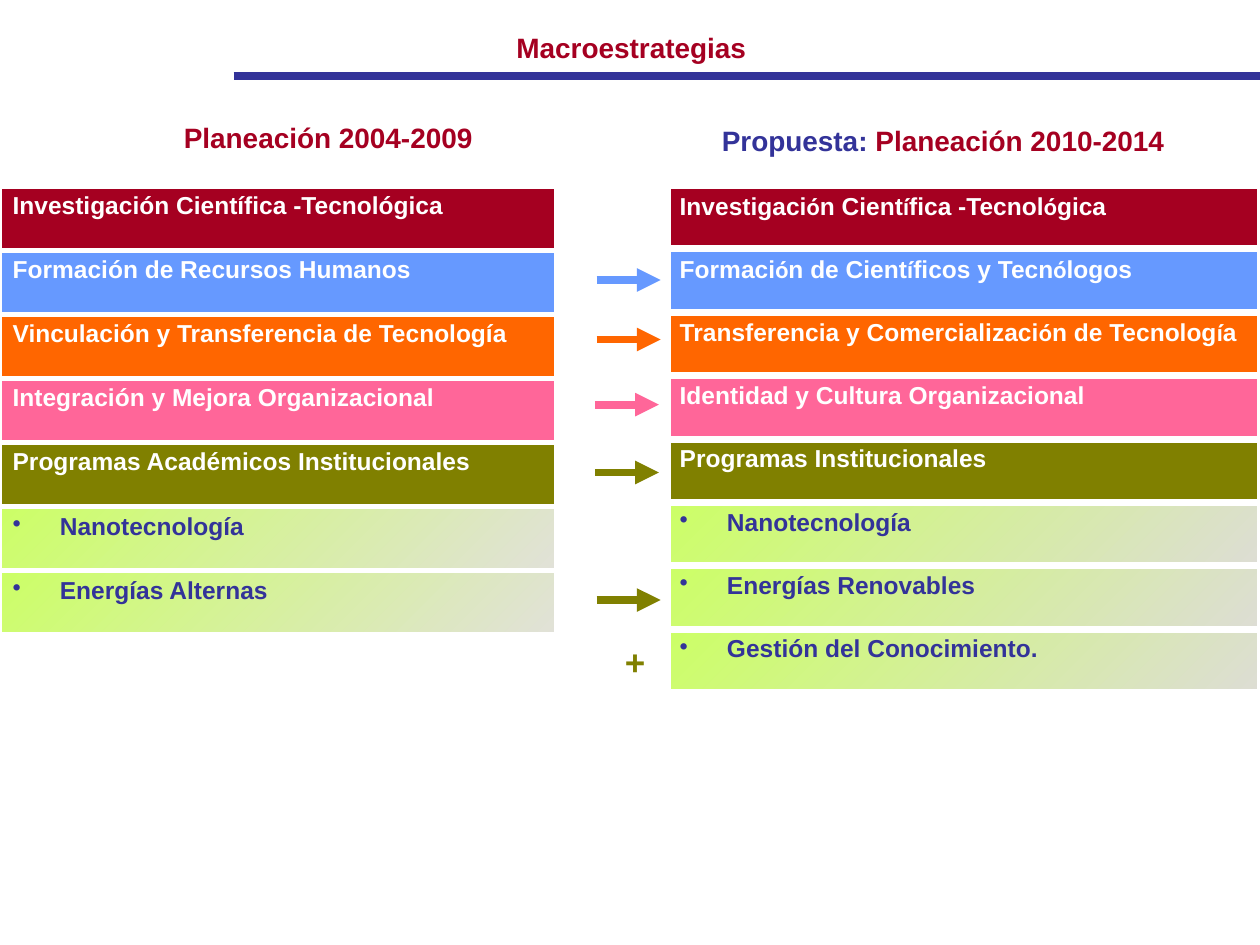
from dataclasses import dataclass
from itertools import groupby
from typing import NamedTuple

from lxml import etree
from pptx import Presentation
from pptx.dml.color import RGBColor
from pptx.enum.shapes import MSO_CONNECTOR
from pptx.enum.text import MSO_AUTO_SIZE, PP_ALIGN
from pptx.oxml.ns import qn
from pptx.util import Pt

STRAIGHT = MSO_CONNECTOR.STRAIGHT
RIGHT = PP_ALIGN.RIGHT
GROW = MSO_AUTO_SIZE.SHAPE_TO_FIT_TEXT


@dataclass(frozen=True)
class Theme:
    font: str = "Arial"
    accent_font: str = "Calibri"
    white: str = "FFFFFF"
    navy: str = "333399"
    crimson: str = "A50021"
    blue: str = "6699FF"
    orange: str = "FF6600"
    pink: str = "FF6699"
    olive: str = "808000"
    lime: str = "CCFF66"
    cell_size: float = 14
    title_size: float = 16
    plus_size: float = 20
    stroke: float = 4.5
    indent: float = 27


THEME = Theme()
ROW_FILLS = [THEME.crimson, THEME.blue, THEME.orange, THEME.pink, THEME.olive]


class Run(NamedTuple):
    text: str
    color: str


class Label(NamedTuple):
    left: float
    top: float
    width: float
    height: float
    size: float
    runs: list[Run]


class Arrow(NamedTuple):
    left: float
    y: float
    color: str


class StrategyTable(NamedTuple):
    left: float
    top: float
    width: float
    row_height: float
    border: float
    fade: str
    accented_letters: str
    strategies: list[str]
    programs: list[str]


TABLES = [
    StrategyTable(381.2, 106, 338.8, 36.25, 4.5, "DDDDD4", "óí", [
        "Investigación Científica -Tecnológica",
        "Formación de Científicos y Tecnólogos",
        "Transferencia y Comercialización de Tecnología",
        "Identidad y Cultura Organizacional",
        "Programas Institucionales",
    ], ["Nanotecnología", "Energías Renovables", "Gestión del Conocimiento."]),
    StrategyTable(0, 106.4, 318, 36.6, 3, "E1E1D8", "", [
        "Investigación Científica -Tecnológica",
        "Formación de Recursos Humanos",
        "Vinculación y Transferencia de Tecnología",
        "Integración y Mejora Organizacional",
        "Programas Académicos Institucionales",
    ], ["Nanotecnología", "Energías Alternas"]),
]

LABELS = [
    Label(97.2, 65.5, 180, 26.6, THEME.title_size,
          [Run("Planeación 2004-2009", THEME.crimson)]),
    Label(404.6, 67, 267.8, 26.6, THEME.title_size,
          [Run("Propuesta:", THEME.navy), Run(" Planeación 2010-2014", THEME.crimson)]),
    Label(350, 362.2, 25.9, 31, THEME.plus_size, [Run("+", THEME.olive)]),
    Label(287.3, 13.7, 146.2, 26.6, THEME.title_size,
          [Run("Macroestrategias", THEME.crimson)]),
]

ARROW_LENGTH = 36.5
ARROWS = [
    Arrow(341, 342.9, THEME.olive),
    Arrow(341, 160, THEME.blue),
    Arrow(341, 194, THEME.orange),
    Arrow(340, 231.2, THEME.pink),
    Arrow(340, 270, THEME.olive),
]


def add_run(paragraph, run: Run, size: float, font: str = THEME.font) -> None:
    item = paragraph.add_run()
    item.text = run.text
    item.font.name = font
    item.font.size = Pt(size)
    item.font.bold = True
    item.font.color.rgb = RGBColor.from_string(run.color)


def add_label(slide, label: Label) -> None:
    shape = slide.shapes.add_textbox(
        Pt(label.left), Pt(label.top), Pt(label.width), Pt(label.height))
    frame = shape.text_frame
    frame.word_wrap = False
    frame.auto_size = GROW
    paragraph = frame.paragraphs[0]
    paragraph.alignment = RIGHT
    for run in label.runs:
        add_run(paragraph, run, label.size)


def add_line(slide, left: float, right: float, y: float, color: str, arrow: bool) -> None:
    connector = slide.shapes.add_connector(STRAIGHT, Pt(left), Pt(y), Pt(right), Pt(y))
    connector.line.color.rgb = RGBColor.from_string(color)
    connector.line.width = Pt(THEME.stroke)
    if arrow:
        etree.SubElement(connector.line._get_or_add_ln(), qn("a:tailEnd"), type="triangle")
    etree.SubElement(connector._element.spPr, qn("a:effectLst"))


def set_borders(cell, width: float) -> None:
    properties = cell._tc.get_or_add_tcPr()
    for position, side in enumerate(("lnL", "lnR", "lnT", "lnB")):
        border = etree.Element(qn(f"a:{side}"), w=str(Pt(width)))
        fill = etree.SubElement(border, qn("a:solidFill"))
        etree.SubElement(fill, qn("a:srgbClr"), val=THEME.white)
        properties.insert(position, border)


def set_gradient(cell, start: str, end: str) -> None:
    cell.fill.gradient()
    cell.fill.gradient_angle = 315
    for stop, color, position in zip(cell.fill.gradient_stops, (start, end), (0, 1)):
        stop.color.rgb = RGBColor.from_string(color)
        stop.position = position


def write_cell(cell, run: Run, bullet: bool, accented_letters: str) -> None:
    paragraph = cell.text_frame.paragraphs[0]
    properties = paragraph._p.get_or_add_pPr()
    properties.set("marL", str(Pt(THEME.indent)))
    properties.set("indent", str(-Pt(THEME.indent)))
    if bullet:
        etree.SubElement(properties, qn("a:buChar"), char="•")
    for accented, letters in groupby(run.text, lambda letter: letter in accented_letters):
        font = THEME.accent_font if accented else THEME.font
        add_run(paragraph, Run("".join(letters), run.color), THEME.cell_size, font)


def add_strategy_table(slide, data: StrategyTable) -> None:
    texts = data.strategies + data.programs
    table = slide.shapes.add_table(
        len(texts), 1, Pt(data.left), Pt(data.top), Pt(data.width),
        Pt(data.row_height * len(texts))).table
    table.first_row = False
    table.horz_banding = False
    for index, text in enumerate(texts):
        table.rows[index].height = Pt(data.row_height)
        cell = table.cell(index, 0)
        bullet = index >= len(data.strategies)
        if bullet:
            set_gradient(cell, THEME.lime, data.fade)
            write_cell(cell, Run(text, THEME.navy), bullet, "")
        else:
            cell.fill.solid()
            cell.fill.fore_color.rgb = RGBColor.from_string(ROW_FILLS[index])
            write_cell(cell, Run(text, THEME.white), bullet, data.accented_letters)
        set_borders(cell, data.border)


def main() -> None:
    presentation = Presentation()
    presentation.slide_width = Pt(720)
    presentation.slide_height = Pt(540)
    slide = presentation.slides.add_slide(presentation.slide_layouts[6])
    add_line(slide, 133.5, 720, 43.4, THEME.navy, False)
    for table in TABLES:
        add_strategy_table(slide, table)
    for label in LABELS:
        add_label(slide, label)
    for arrow in ARROWS:
        add_line(slide, arrow.left, arrow.left + ARROW_LENGTH, arrow.y, arrow.color, True)
    presentation.save("out.pptx")


if __name__ == "__main__":
    main()
